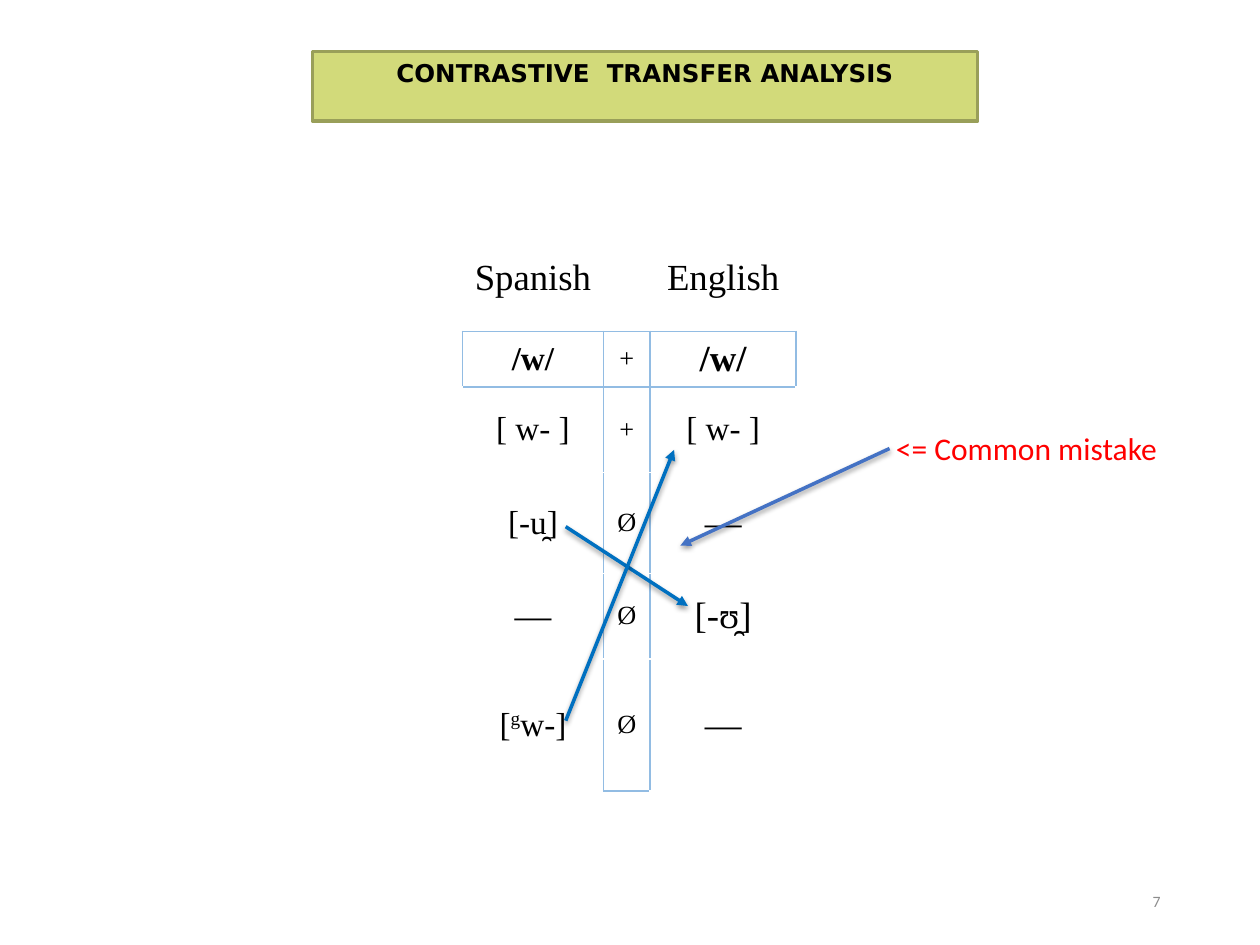
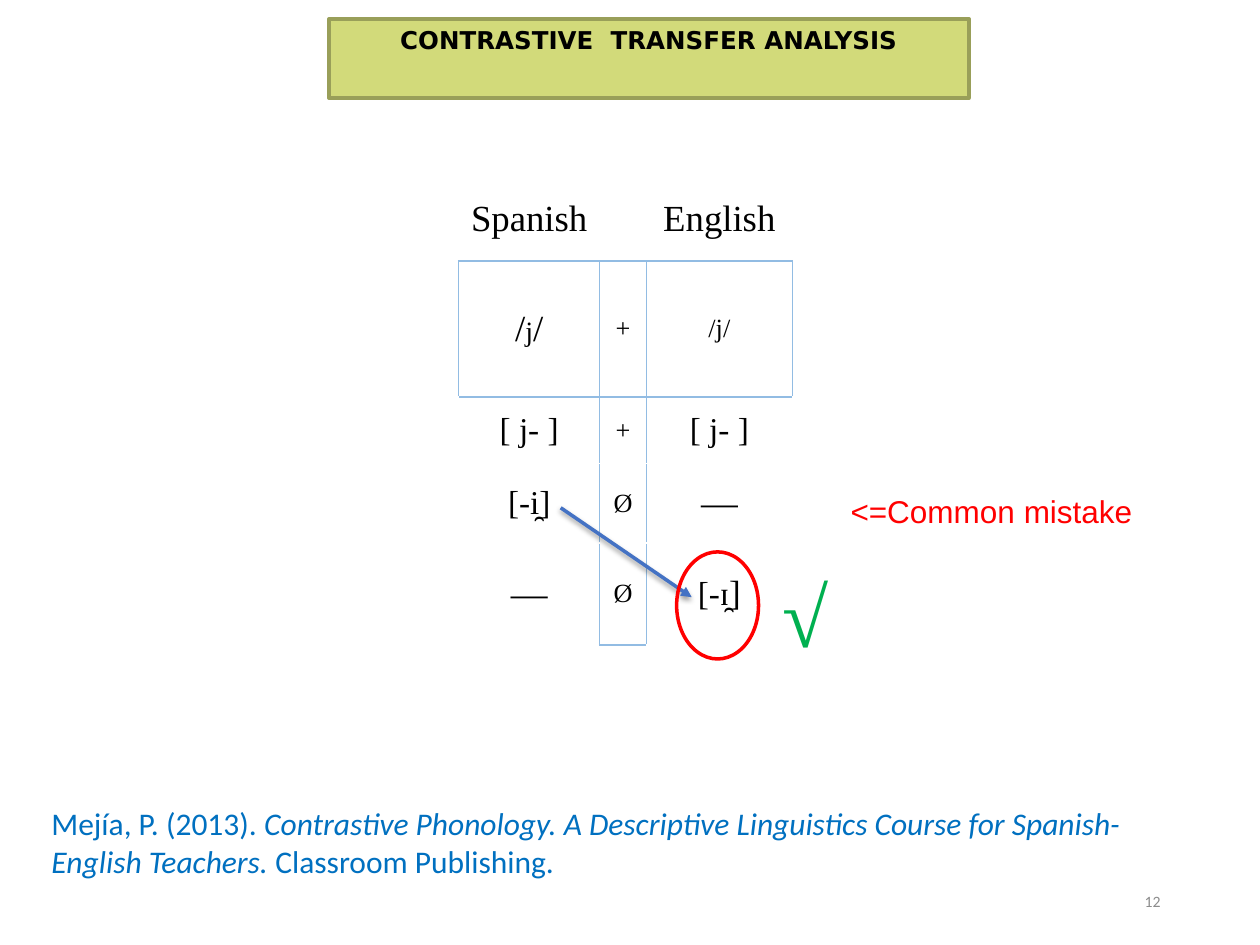
from dataclasses import dataclass

from lxml import etree
from pptx import Presentation
from pptx import util as u
from pptx.dml.color import RGBColor
from pptx.enum import shapes, text
from pptx.oxml import parse_xml
from pptx.oxml.ns import nsdecls, qn

PX = 9144  # EMU per px, 100 px to the inch
LEFT, MID, RIGHT = text.PP_ALIGN.LEFT, text.PP_ALIGN.CENTER, text.PP_ALIGN.RIGHT
TOP, CENTRE = text.MSO_ANCHOR.TOP, text.MSO_ANCHOR.MIDDLE


@dataclass(frozen=True)
class Theme:
    band: str = "D2DA7A"
    rim: str = "999F59"
    ink: str = "000000"
    grid: str = "92BCE3"
    paper: str = "FFFFFF"
    blue: str = "0070C0"
    steel: str = "4472C4"
    red: str = "FF0000"
    green: str = "00B050"
    grey: str = "8C8C8C"
    head: str = "DejaVu Sans"
    body: str = "Calibri"
    sans: str = "Arial"
    serif: str = "Times New Roman"
    title: int = 14
    note: int = 18
    sound: int = 19
    large: int = 21
    sign: int = 15
    small: int = 16
    page: int = 9
    tick: int = 48
    line: int = 2


class Deck:
    def __init__(self, theme):
        self.theme = theme
        self.prs = Presentation()
        self.prs.slide_width, self.prs.slide_height = 1000 * PX, 750 * PX
        self.slide = None

    def start(self):
        self.slide = self.prs.slides.add_slide(self.prs.slide_layouts[6])

    def words(self, frame, words, font, size, color, align=LEFT, bold=False):
        """Fill a frame with a string, or with (text, style) pairs."""
        para = frame.paragraphs[0]
        para.alignment = align
        para.font.name, para.font.size = font, u.Pt(size)
        para.font.bold = bold
        para.font.color.rgb = RGBColor.from_string(color)
        parts = [(words, {})] if isinstance(words, str) else words
        for part, style in parts:
            run = para.add_run()
            run.text = part
            if "size" in style:
                run.font.size = u.Pt(style["size"])
            if "italic" in style:
                run.font.italic = style["italic"]
            if "base" in style:
                run.font._element.set("baseline", str(style["base"] * 1000))

    def shape(self, kind, box, line, fill=None):
        item = self.slide.shapes.add_shape(kind, *(n * PX for n in box))
        item.shadow.inherit = False
        if fill:
            item.fill.solid()
            item.fill.fore_color.rgb = RGBColor.from_string(fill)
        else:
            item.fill.background()
        item.line.color.rgb = RGBColor.from_string(line)
        item.line.width = u.Pt(self.theme.line)
        return item

    def title(self, words, box):
        t = self.theme
        band = self.shape(shapes.MSO_SHAPE.RECTANGLE, box, t.rim, t.band)
        frame = band.text_frame
        frame.margin_left = frame.margin_right = 5 * PX
        frame.margin_top = frame.margin_bottom = 5 * PX
        frame.vertical_anchor = TOP
        self.words(frame, words, t.head, t.title, t.ink, MID, True)

    def label(self, words, box, font, size, color, align=LEFT, bold=False,
              inset=10, anchor=TOP, wrap=True):
        item = self.slide.shapes.add_textbox(*(n * PX for n in box))
        frame = item.text_frame
        frame.word_wrap, frame.vertical_anchor = wrap, anchor
        frame.margin_left = frame.margin_right = inset * PX
        frame.margin_top = frame.margin_bottom = 5 * PX
        self.words(frame, words, font, size, color, align, bold)
        return item

    def page(self, number):
        t = self.theme
        self.label(str(number), (706, 695, 225, 40), t.body, t.page, t.grey,
                   RIGHT, anchor=CENTRE)

    def arrow(self, start, end, color, source=None):
        """Draw a shadowed arrow, joined to the left of source if given."""
        line = self.slide.shapes.add_connector(
            shapes.MSO_CONNECTOR.STRAIGHT, *(n * PX for n in start + end))
        if source is not None:
            line.begin_connect(source, 1)
        line.line.color.rgb = RGBColor.from_string(color)
        line.line.width = u.Pt(self.theme.line)
        etree.SubElement(line.line._get_or_add_ln(), qn("a:tailEnd"),
                         type="triangle")
        line._element.spPr.append(parse_xml(
            f'<a:effectLst {nsdecls("a")}><a:outerShdw blurRad="38100" '
            'dist="20320" dir="5400000" rotWithShape="0"><a:srgbClr '
            'val="000000"><a:alpha val="38000"/></a:srgbClr></a:outerShdw>'
            '</a:effectLst>'))

    def edge(self, cell, row, col, last):
        """Box the phoneme row and the sign column; leave the rest white."""
        full, below = row == 1, row > 1
        blue = {"L": full or below and col > 0,
                "R": full or below and col < 2,
                "T": row in (1, 2),
                "B": row < 2 or row == last and col == 1}
        props = cell._tc.get_or_add_tcPr()
        for side, on in blue.items():
            color = self.theme.grid if on else self.theme.paper
            props.append(parse_xml(
                f'<a:ln{side} {nsdecls("a")} w="12700"><a:solidFill>'
                f'<a:srgbClr val="{color}"/></a:solidFill></a:ln{side}>'))
        cell.fill.background()

    def table(self, left, top, highs, rows):
        """Each cell is (words, size), with a third item if bold."""
        t, wide = self.theme, (112, 37, 116)
        grid = self.slide.shapes.add_table(
            len(rows), 3, left * PX, top * PX, sum(wide) * PX,
            sum(highs) * PX).table
        grid.first_row = grid.horz_banding = False
        for col, width in zip(grid.columns, wide):
            col.width = width * PX
        for r, (high, row) in enumerate(zip(highs, rows)):
            grid.rows[r].height = high * PX
            for c, (words, size, *bold) in enumerate(row):
                cell = grid.cell(r, c)
                cell.margin_left = cell.margin_right = 7 * PX
                cell.margin_top = cell.margin_bottom = 0
                cell.vertical_anchor = CENTRE
                self.words(cell.text_frame, words, t.serif, size, t.ink, MID,
                           bool(bold))
                self.edge(cell, r, c, len(rows) - 1)


def main():
    t = Theme()
    deck = Deck(t)
    name = "CONTRASTIVE  TRANSFER ANALYSIS"
    same, none = ("+", t.sign), ("Ø", t.sign)
    dash = ("—", t.large)
    head = [("Spanish", t.large), ("", t.sign), ("English", t.large)]

    deck.start()
    deck.title(name, (248, 41, 528, 55))
    deck.table(367, 178, (85, 44, 68, 80, 68, 105), [
        head,
        [("/w/", t.sound, True), same, ("/w/", t.large, True)],
        [("[ w- ]", t.sound), same, ("[ w- ]", t.sound)],
        [("[-u̯]", t.sound), none, dash],
        [dash, none, ("[-ʊ̯]", t.large)],
        [([("[", {}), ("g", {"base": 32}), ("w-]", {})], t.sound), none, dash],
    ])
    deck.arrow((449, 418), (546, 481), t.blue)
    deck.arrow((449, 572), (535, 357), t.blue)
    error = deck.label("<= Common mistake", (706, 336, 225, 40), t.body,
                       t.note, t.red, inset=5)
    deck.arrow((706, 356), (540, 433), t.steel, error)
    deck.page(7)

    deck.start()
    deck.title(name, (261, 15, 508, 63))
    glide = [("/", {}), ("j", {"size": t.small}), ("/", {})]
    deck.table(364, 141, (66, 108, 53, 63, 81), [
        head,
        [(glide, t.large), same, ("/j/", t.sign)],
        [("[ j- ]", t.sound), same, ("[ j- ]", t.sound)],
        [("[-i̯]", t.sound), none, dash],
        [dash, none, ([("[-ɪ̯", {}), ("]", {"size": 20})], t.sound)],
    ])
    deck.label("<=Common mistake", (670, 386, 265, 40), t.sans, t.note, t.red,
               inset=5)
    deck.arrow((445, 403), (549, 474), t.steel)
    deck.shape(shapes.MSO_SHAPE.OVAL, (537, 438, 65, 85), t.red)
    deck.page(12)
    deck.label([
        ("Mejía, P. (2013). ", {}),
        ("Contrastive Phonology. A Descriptive Linguistics Course for "
         "Spanish-English Teachers. ", {"italic": True}),
        ("Classroom Publishing.", {}),
    ], (31, 633, 930, 71), t.body, t.note, t.blue)
    deck.label("√", (611, 442, 57, 91), t.serif, t.tick, t.green, bold=True,
               wrap=False)

    deck.prs.save("out.pptx")


if __name__ == "__main__":
    main()
